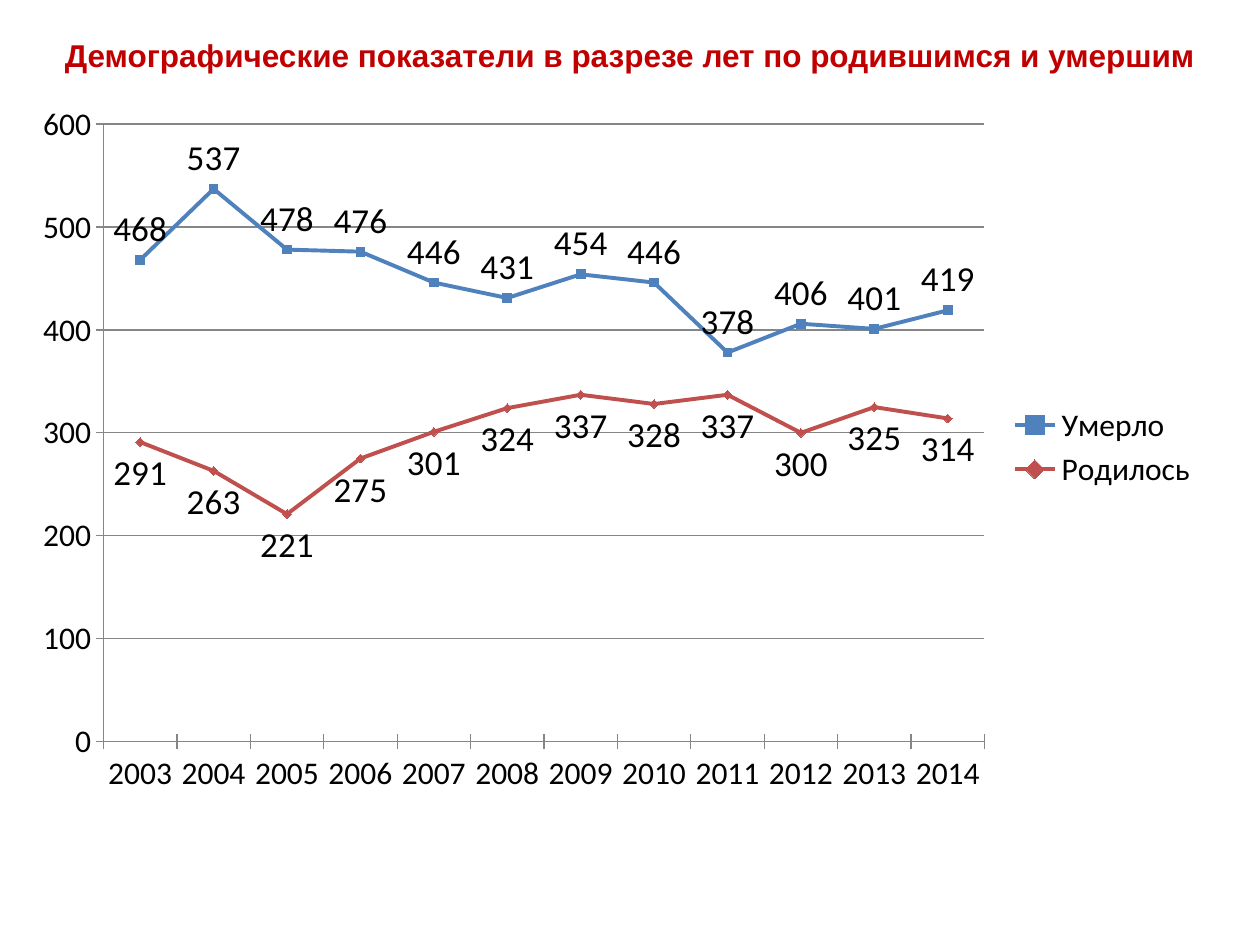
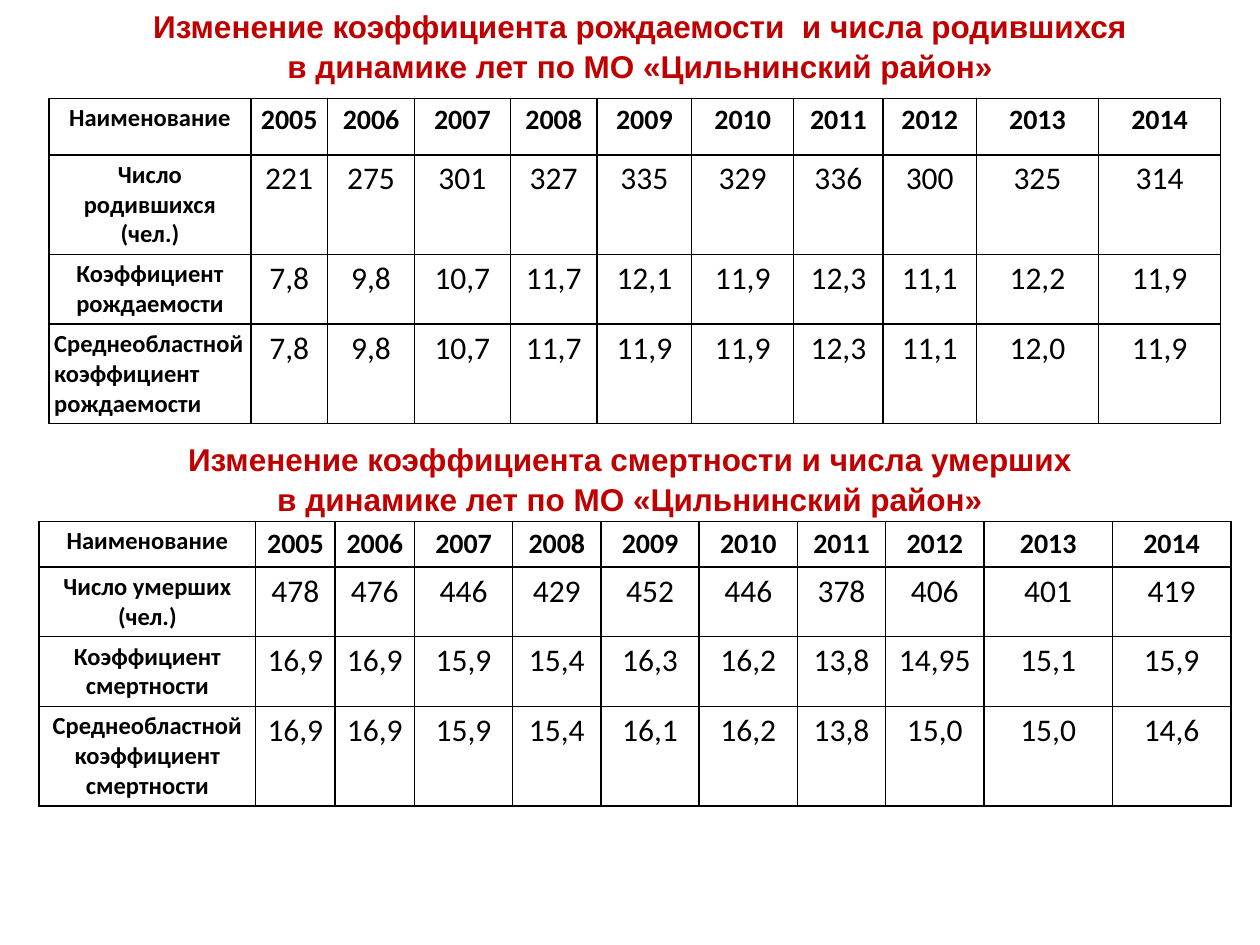
"""Build two slides on births and deaths by year."""
from dataclasses import dataclass

from lxml import etree
from pptx import Presentation
from pptx.chart.data import CategoryChartData
from pptx.dml.color import RGBColor
from pptx.enum.chart import (XL_CHART_TYPE, XL_LABEL_POSITION, XL_LEGEND_POSITION,
                             XL_MARKER_STYLE, XL_TICK_MARK)
from pptx.enum.text import MSO_ANCHOR, MSO_AUTO_SIZE, PP_ALIGN
from pptx.oxml.ns import qn
from pptx.util import Inches, Pt

LEFT, CENTER = PP_ALIGN.LEFT, PP_ALIGN.CENTER
MIDDLE, FIXED = MSO_ANCHOR.MIDDLE, MSO_AUTO_SIZE.NONE
ABOVE, BELOW = XL_LABEL_POSITION.ABOVE, XL_LABEL_POSITION.BELOW
SQUARE, DIAMOND = XL_MARKER_STYLE.SQUARE, XL_MARKER_STYLE.DIAMOND
LINES, RIGHT, CROSS = XL_CHART_TYPE.LINE_MARKERS, XL_LEGEND_POSITION.RIGHT, XL_TICK_MARK.CROSS
TITLE_ONLY = 5


@dataclass(frozen=True)
class Theme:
    """Colours, fonts and type sizes shared by the slides."""
    red: str = "C00000"
    black: str = "000000"
    grey: str = "868686"
    head_font: str = "Arial"
    body_font: str = "Calibri"
    head: int = 18
    name: int = 14
    year: int = 16
    value: int = 18
    label: int = 20


@dataclass(frozen=True)
class Box:
    """A place on the slide in inches."""
    left: float
    top: float
    width: float
    height: float

    def spot(self) -> tuple:
        """Return the place as lengths."""
        return tuple(map(Inches, (self.left, self.top, self.width, self.height)))


@dataclass(frozen=True)
class Trend:
    """One line of the chart."""
    name: str
    values: tuple
    color: str
    marker: object
    label: object


@dataclass(frozen=True)
class Row:
    """One table row: its name and its values."""
    name: str
    values: str
    align: object = CENTER


@dataclass(frozen=True)
class Grid:
    """A table with its heading."""
    head: tuple
    head_box: Box
    left: float
    top: float
    widths: tuple
    heights: tuple
    rows: tuple


THEME = Theme()
PLACE = "в динамике лет по МО «Цильнинский район»"
YEARS = [str(year) for year in range(2003, 2015)]
TABLE_HEAD = Row("Наименование", " ".join(YEARS[2:]))
CHART_HEAD = ("Демографические показатели в разрезе лет по родившимся и умершим",)
CHART_BOX = Box(0.16, 0.7, 9.45, 5.7)
PLOT = {"x": 0.07, "y": 0.05, "w": 0.74, "h": 0.86}
TRENDS = (
    Trend("Умерло", (468, 537, 478, 476, 446, 431, 454, 446, 378, 406, 401, 419),
          "4F81BD", SQUARE, ABOVE),
    Trend("Родилось", (291, 263, 221, 275, 301, 324, 337, 328, 337, 300, 325, 314),
          "C0504D", DIAMOND, BELOW),
)
BIRTHS = Grid(
    ("Изменение коэффициента рождаемости  и числа родившихся", PLACE),
    Box(0.39, 0, 9.38, 0.71), 0.39, 0.78,
    (1.6, 0.61, 0.69, 0.76, 0.69, 0.75, 0.81, 0.71, 0.74, 0.97, 0.97),
    (0.45, 0.78, 0.55, 0.78),
    (TABLE_HEAD,
     Row("Число родившихся (чел.)", "221 275 301 327 335 329 336 300 325 314"),
     Row("Коэффициент рождаемости", "7,8 9,8 10,7 11,7 12,1 11,9 12,3 11,1 12,2 11,9"),
     Row("Среднеобластной коэффициент рождаемости",
         "7,8 9,8 10,7 11,7 11,9 11,9 12,3 11,1 12,0 11,9", LEFT)))
DEATHS = Grid(
    ("Изменение коэффициента смертности и числа умерших", PLACE),
    Box(0.31, 3.44, 9.38, 0.71), 0.31, 4.14,
    (1.72, 0.63, 0.63, 0.78, 0.7, 0.78, 0.78, 0.7, 0.78, 1.02, 0.94),
    (0.36, 0.55, 0.55, 0.78),
    (TABLE_HEAD,
     Row("Число умерших (чел.)", "478 476 446 429 452 446 378 406 401 419"),
     Row("Коэффициент смертности", "16,9 16,9 15,9 15,4 16,3 16,2 13,8 14,95 15,1 15,9"),
     Row("Среднеобластной коэффициент смертности",
         "16,9 16,9 15,9 15,4 16,1 16,2 13,8 15,0 15,0 14,6")))


def style(font, *, size: int, name: str = THEME.body_font,
          color: str = THEME.black, bold: bool = False) -> None:
    """Set the face, size and colour of a font."""
    font.name, font.size, font.bold = name, Pt(size), bold
    font.color.rgb = RGBColor.from_string(color)


def write(frame, lines: tuple, *, align=CENTER, space: float = 1.0, **look) -> None:
    """Write one paragraph a line in the given format."""
    frame.word_wrap = True
    for i, line in enumerate(lines):
        para = frame.paragraphs[0] if i == 0 else frame.add_paragraph()
        para.alignment, para.line_spacing = align, space
        run = para.add_run()
        run.text = line
        style(run.font, **look)


def draw_head(shape, lines: tuple, box: Box) -> None:
    """Place and fill a red heading."""
    shape.left, shape.top, shape.width, shape.height = box.spot()
    frame = shape.text_frame
    frame.auto_size, frame.vertical_anchor = FIXED, MIDDLE
    write(frame, lines, space=1.06, size=THEME.head, name=THEME.head_font,
          color=THEME.red, bold=True)


def draw_line(line, color: str, width: float) -> None:
    """Set the colour and width of a line."""
    line.color.rgb = RGBColor.from_string(color)
    line.width = Pt(width)


def set_plot(chart) -> None:
    """Fix the inner plot area as shares of the chart."""
    area = chart.element.find(".//" + qn("c:plotArea"))
    for old in area.findall(qn("c:layout")):
        area.remove(old)
    layout = etree.Element(qn("c:layout"))
    manual = etree.SubElement(layout, qn("c:manualLayout"))
    parts = {"layoutTarget": "inner", "xMode": "edge", "yMode": "edge", **PLOT}
    for tag, value in parts.items():
        etree.SubElement(manual, qn(f"c:{tag}")).set("val", str(value))
    area.insert(0, layout)


def draw_chart(slide) -> None:
    """Draw the line chart of births and deaths."""
    data = CategoryChartData()
    data.categories = YEARS
    for trend in TRENDS:
        data.add_series(trend.name, trend.values)
    chart = slide.shapes.add_chart(LINES, *CHART_BOX.spot(), data).chart
    style(chart.font, size=THEME.value)
    chart.has_title = False
    chart.has_legend = True
    chart.legend.position = RIGHT
    chart.legend.include_in_layout = False
    set_plot(chart)
    for axis in (chart.category_axis, chart.value_axis):
        axis.major_tick_mark = CROSS
        draw_line(axis.format.line, THEME.grey, 0.75)
    scale = chart.value_axis
    scale.minimum_scale, scale.maximum_scale, scale.major_unit = 0, 600, 100
    scale.has_major_gridlines = True
    draw_line(scale.major_gridlines.format.line, THEME.grey, 0.75)
    for series, trend in zip(chart.plots[0].series, TRENDS):
        series.smooth = False
        draw_line(series.format.line, trend.color, 2.25)
        marker = series.marker
        marker.style, marker.size = trend.marker, 5
        marker.format.fill.solid()
        marker.format.fill.fore_color.rgb = RGBColor.from_string(trend.color)
        draw_line(marker.format.line, trend.color, 0.75)
        labels = series.data_labels
        labels.show_value, labels.position = True, trend.label
        style(labels.font, size=THEME.label)


def frame_cell(cell) -> None:
    """Give a cell black borders, small margins and no fill."""
    props = cell._tc.get_or_add_tcPr()
    for side in "LRTB":
        line = etree.SubElement(props, qn(f"a:ln{side}"), w=str(Pt(1)))
        fill = etree.SubElement(line, qn("a:solidFill"))
        etree.SubElement(fill, qn("a:srgbClr"), val=THEME.black)
    cell.fill.background()
    cell.margin_left = cell.margin_right = Inches(0.04)
    cell.margin_top = cell.margin_bottom = Inches(0.04)


def draw_grid(slide, grid: Grid) -> None:
    """Draw a table with its rows and columns."""
    box = Box(grid.left, grid.top, sum(grid.widths), sum(grid.heights))
    table = slide.shapes.add_table(len(grid.rows), len(grid.widths), *box.spot()).table
    table.first_row = table.horz_banding = False
    for col, width in zip(table.columns, grid.widths):
        col.width = Inches(width)
    for r, (row, height) in enumerate(zip(grid.rows, grid.heights)):
        table.rows[r].height = Inches(height)
        size = THEME.value if r else THEME.year
        for c, text in enumerate((row.name, *row.values.split())):
            cell = table.cell(r, c)
            frame_cell(cell)
            write(cell.text_frame, (text,), align=CENTER if c else row.align,
                  size=size if c else THEME.name, bold=r == 0 or c == 0)


def main() -> None:
    """Build and save the slides."""
    deck = Presentation()
    deck.slide_width, deck.slide_height = Inches(10), Inches(7.5)
    layout = deck.slide_layouts[TITLE_ONLY]

    slide = deck.slides.add_slide(layout)
    draw_chart(slide)
    draw_head(slide.shapes.title, CHART_HEAD, Box(0.31, 0.23, 9.38, 0.4))

    slide = deck.slides.add_slide(layout)
    draw_head(slide.shapes.title, BIRTHS.head, BIRTHS.head_box)
    draw_grid(slide, BIRTHS)
    label = slide.shapes.add_textbox(*DEATHS.head_box.spot())
    draw_head(label, DEATHS.head, DEATHS.head_box)
    draw_grid(slide, DEATHS)

    deck.save("out.pptx")


if __name__ == "__main__":
    main()
